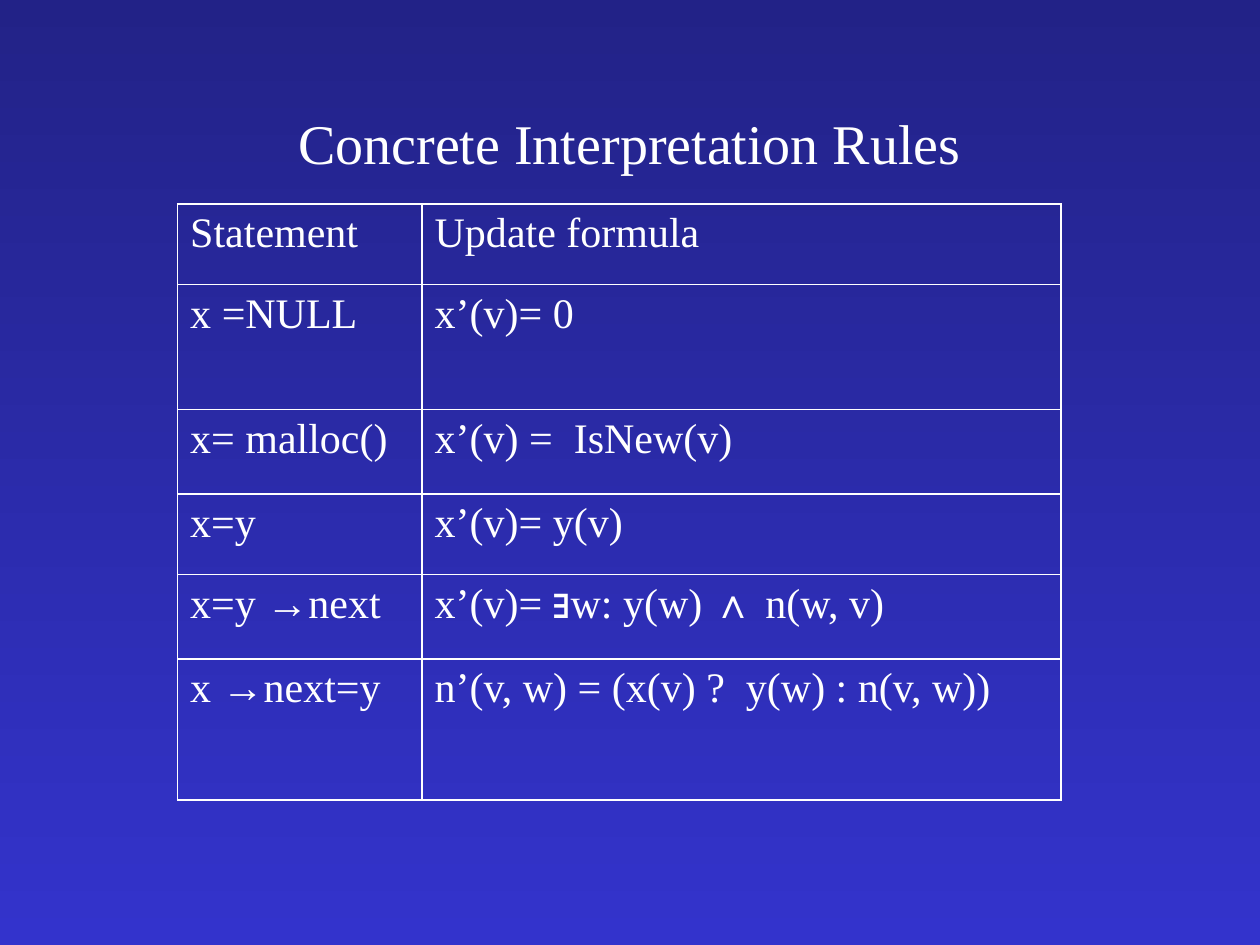
"""Build a slide with a table of concrete interpretation rules."""
from lxml import etree
from pptx import Presentation
from pptx import util as u
from pptx.dml.color import RGBColor
from pptx.enum import text
from pptx.oxml import ns

TITLE = "Concrete Interpretation Rules"
RULES = [
    ("Statement", "Update formula", 0.64),
    ("x =NULL", "x’(v)= 0", 0.99),
    ("x= malloc()", "x’(v) =  IsNew(v)", 0.67),
    ("x=y", "x’(v)= y(v)", 0.64),
    ("x=y →next", "x’(v)= ∃w: y(w) ∧ n(w, v)", 0.67),
    ("x →next=y", "n’(v, w) = (x(v) ?  y(w) : n(v, w))", 1.12),
]
COLUMN_WIDTHS = (1.94, 5.07)
TABLE_LEFT, TABLE_TOP = 1.41, 1.62

WHITE = RGBColor(0xFF, 0xFF, 0xFF)
NAVY = RGBColor(0x22, 0x22, 0x87)
BLUE = RGBColor(0x33, 0x33, 0xCC)
TITLE_FORMAT = {"name": "Times New Roman", "size": u.Pt(32), "bold": False}
CELL_FORMAT = {**TITLE_FORMAT, "size": u.Pt(24)}


def write(frame, content, font_format):
    frame.text = content
    paragraph = frame.paragraphs[0]
    font = paragraph.runs[0].font
    for name, value in font_format.items():
        setattr(font, name, value)
    font.color.rgb = WHITE
    return paragraph


def add_borders(cell):
    properties = cell._tc.get_or_add_tcPr()
    for position, side in enumerate(("lnL", "lnR", "lnT", "lnB")):
        line = etree.Element(ns.qn(f"a:{side}"), w=str(u.Pt(1)))
        fill = etree.SubElement(line, ns.qn("a:solidFill"))
        etree.SubElement(fill, ns.qn("a:srgbClr"), val=str(WHITE))
        properties.insert(position, line)


def add_title(slide):
    title = slide.shapes.title
    box = {"left": 0.75, "top": 0.67, "width": 8.5, "height": 0.92}
    for name, value in box.items():
        setattr(title, name, u.Inches(value))
    title.text_frame.vertical_anchor = text.MSO_ANCHOR.MIDDLE
    paragraph = write(title.text_frame, TITLE, TITLE_FORMAT)
    paragraph.alignment = text.PP_ALIGN.CENTER


def add_rules(slide):
    heights = [rule[-1] for rule in RULES]
    bounds = (TABLE_LEFT, TABLE_TOP, sum(COLUMN_WIDTHS), sum(heights))
    table = slide.shapes.add_table(
        len(RULES), len(COLUMN_WIDTHS), *map(u.Inches, bounds)
    ).table
    table.first_row = table.horz_banding = False
    for column, width in zip(table.columns, COLUMN_WIDTHS):
        column.width = u.Inches(width)
    for row, (*contents, height) in zip(table.rows, RULES):
        row.height = u.Inches(height)
        for cell, content in zip(row.cells, contents):
            cell.fill.background()
            write(cell.text_frame, content, CELL_FORMAT)
            add_borders(cell)


def main():
    presentation = Presentation()
    presentation.slide_width = u.Inches(10)
    presentation.slide_height = u.Inches(7.5)
    slide = presentation.slides.add_slide(presentation.slide_layouts[5])
    background = slide.background.fill
    background.gradient()
    background.gradient_angle = 270
    for stop, color in zip(background.gradient_stops, (NAVY, BLUE)):
        stop.color.rgb = color
    add_title(slide)
    add_rules(slide)
    presentation.save("out.pptx")


if __name__ == "__main__":
    main()
